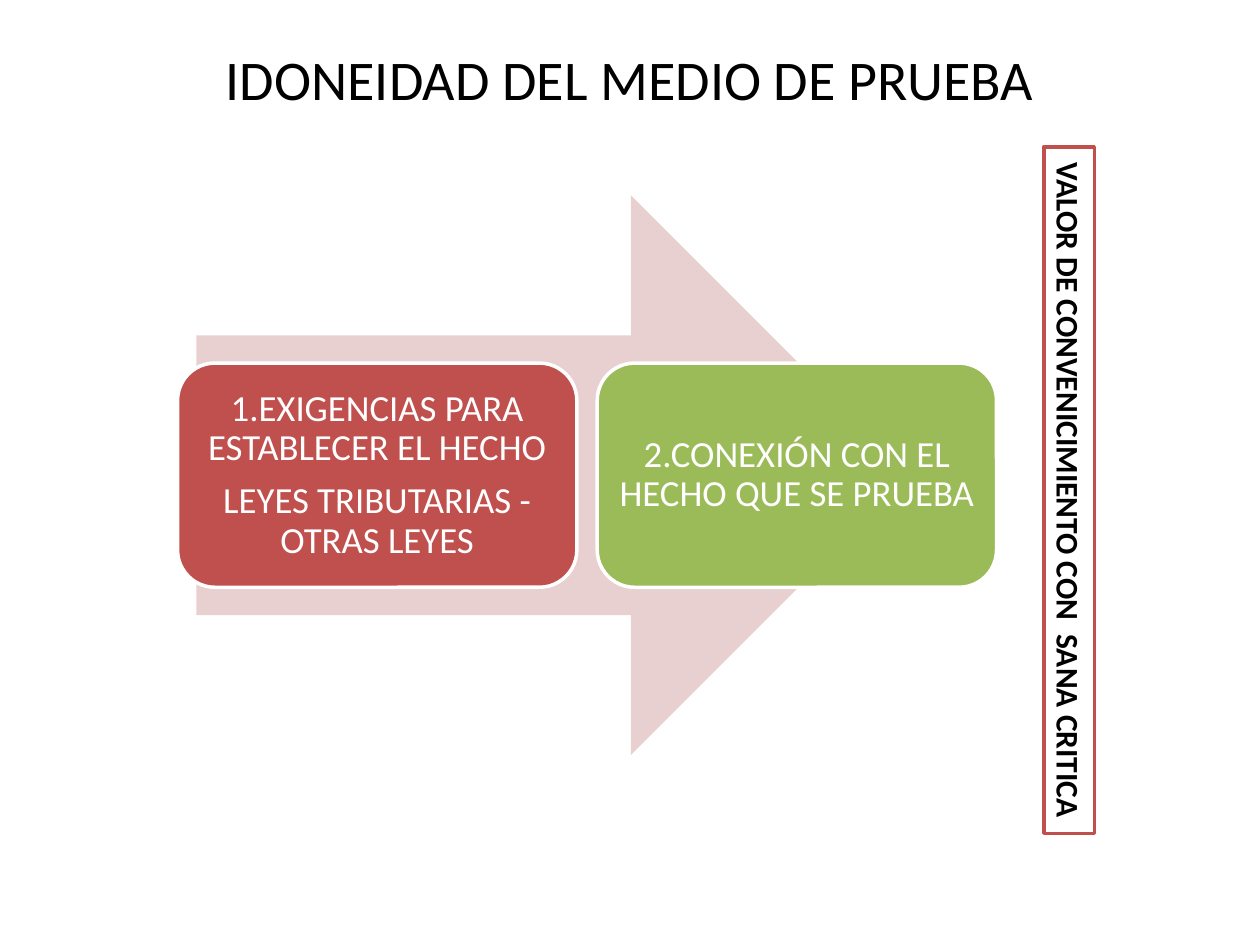
import pptx
import pptx.util
import pptx.dml.color
import pptx.enum.shapes
import pptx.enum.text

Cm = pptx.util.Cm
Pt = pptx.util.Pt
RGBColor = pptx.dml.color.RGBColor
SHAPE = pptx.enum.shapes.MSO_SHAPE
ANCHOR = pptx.enum.text.MSO_ANCHOR
CENTER = pptx.enum.text.PP_ALIGN.CENTER

BLACK = RGBColor(0x00, 0x00, 0x00)
WHITE = RGBColor(0xFF, 0xFF, 0xFF)
RED = RGBColor(0xC0, 0x50, 0x4D)
GREEN = RGBColor(0x9B, 0xBB, 0x59)
PINK = RGBColor(0xE8, 0xD0, 0xD0)


def add_block(kind, left, top, width, height, fill, line=None):
    block = page.shapes.add_shape(kind, Cm(left), Cm(top), Cm(width), Cm(height))
    block.shadow.inherit = False
    block.fill.solid()
    block.fill.fore_color.rgb = fill
    if line is None:
        block.line.fill.background()
    else:
        block.line.color.rgb = line
        block.line.width = Pt(2)
    return block


def write_paragraph(para, text, size, color, bold=False):
    para.alignment = CENTER
    span = para.add_run()
    span.text = text
    span.font.name = "Calibri"
    span.font.size = Pt(size)
    span.font.bold = bold
    span.font.color.rgb = color


deck = pptx.Presentation()
deck.slide_width = Cm(25.4)
deck.slide_height = Cm(19.05)
page = deck.slides.add_slide(deck.slide_layouts[5])

# Title
title = page.shapes.title
title.left, title.top, title.width, title.height = Cm(1.27), Cm(0.76), Cm(22.86), Cm(3.18)
title.text_frame.vertical_anchor = ANCHOR.TOP
write_paragraph(title.text_frame.paragraphs[0], "IDONEIDAD DEL MEDIO DE PRUEBA", 32, BLACK)

# Arrow with the two steps on it
add_block(SHAPE.RIGHT_ARROW, 3.96, 3.94, 14.4, 11.28, PINK)

steps = [
    (RED, ["1.EXIGENCIAS PARA ESTABLECER EL HECHO", "LEYES TRIBUTARIAS - OTRAS LEYES"]),
    (GREEN, ["2.CONEXIÓN CON EL HECHO QUE SE PRUEBA"]),
]
for index, (color, lines) in enumerate(steps):
    step = add_block(SHAPE.ROUNDED_RECTANGLE, 3.58 + index * 8.46, 7.32, 8.05, 4.52, color, WHITE)
    frame = step.text_frame
    frame.word_wrap = True
    frame.vertical_anchor = ANCHOR.MIDDLE
    frame.margin_left = frame.margin_right = Cm(0.23)
    frame.margin_top = frame.margin_bottom = Cm(0.23)
    for number, text in enumerate(lines):
        para = frame.add_paragraph() if number else frame.paragraphs[0]
        para.line_spacing = 0.9
        para.space_after = Pt(7.35)
        write_paragraph(para, text, 21, WHITE)

# Vertical banner
banner = add_block(SHAPE.RECTANGLE, 14.63, 9.37, 13.84, 1.02, WHITE, RED)
banner.rotation = 90
frame = banner.text_frame
frame.word_wrap = False
frame.auto_size = pptx.enum.text.MSO_AUTO_SIZE.SHAPE_TO_FIT_TEXT
frame.vertical_anchor = ANCHOR.TOP
write_paragraph(frame.paragraphs[0], "VALOR DE CONVENICIMIENTO CON  SANA CRITICA", 18, BLACK, bold=True)

deck.save("out.pptx")
